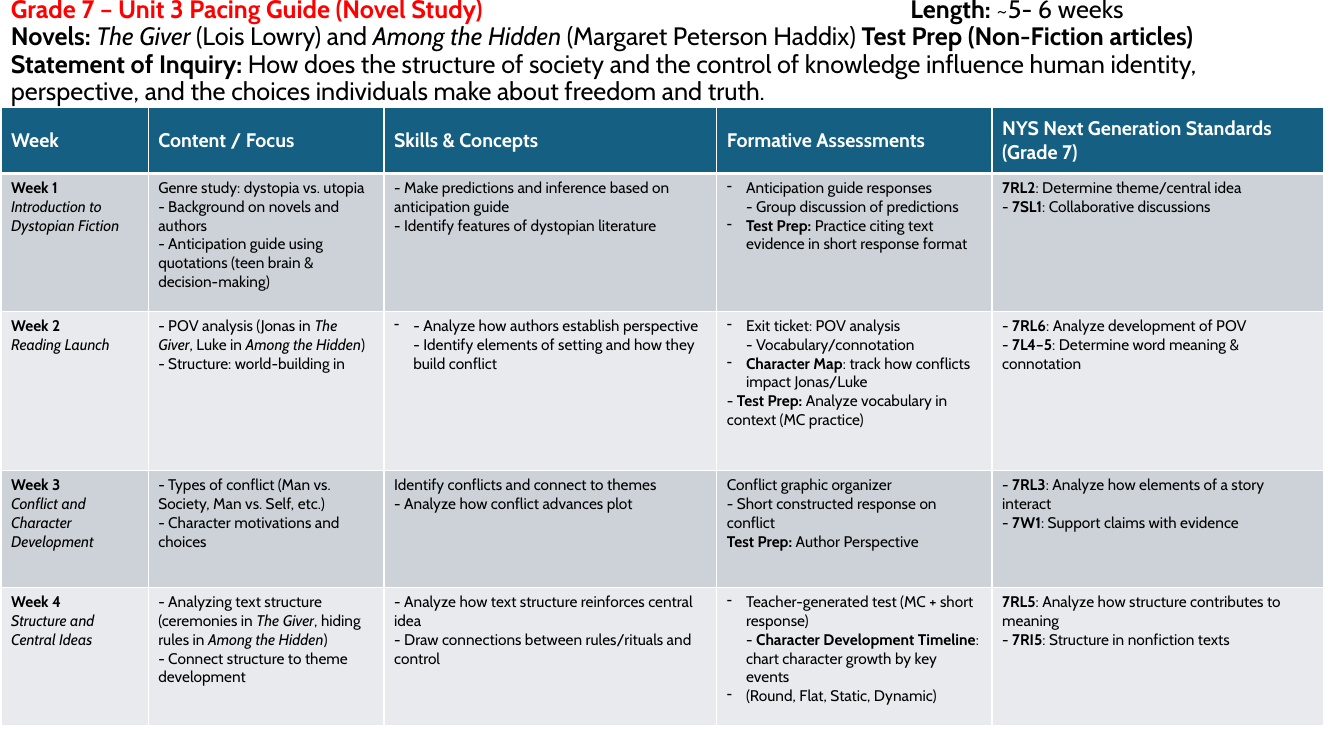
from lxml.etree import SubElement
from pptx import Presentation
from pptx.dml.color import RGBColor
from pptx.enum.text import MSO_ANCHOR as Anchor
from pptx.oxml.ns import qn
from pptx.util import Inches, Pt

FONT = "Cabin"
RED = RGBColor(0xFF, 0x00, 0x00)
BLACK = RGBColor(0x00, 0x00, 0x00)
WHITE = RGBColor(0xFF, 0xFF, 0xFF)
TEAL = RGBColor(0x15, 0x60, 0x82)
BANDS = [RGBColor(0xCC, 0xD2, 0xD8), RGBColor(0xE8, 0xEA, 0xED)]

SLIDE_W, SLIDE_H = 13.33, 7.5
COLUMNS = [1.46, 2.34, 3.3, 2.73, 3.29]
ROWS = [0.65, 1.37, 1.58, 1.16, 1.37]
HANG = 0.19
BULLET = "• "

# Markup: *bold*, _italic_; a leading bullet makes a hanging dash item
HEADING = (
    "*Grade 7 – Unit 3 Pacing Guide (Novel Study)**\tLength:* ~5- 6 weeks\n"
    "*Novels:* _The Giver_ (Lois Lowry) and _Among the Hidden_ "
    "(Margaret Peterson Haddix) *Test Prep (Non-Fiction articles)*\n"
    "*Statement of Inquiry:* How does the structure of society and the control of "
    "knowledge influence human identity, perspective, and the choices individuals "
    "make about freedom and truth."
)
TITLES = ["Week", "Content / Focus", "Skills & Concepts", "Formative Assessments",
          "NYS Next Generation Standards (Grade 7)"]
WEEKS = [
    [
        ["*Week 1*\n_Introduction to Dystopian Fiction_"],
        ["Genre study: dystopia vs. utopia\n- Background on novels and authors\n"
         "- Anticipation guide using quotations (teen brain & decision-making)"],
        ["- Make predictions and inference based on anticipation guide\n"
         "- Identify features of dystopian literature"],
        ["• Anticipation guide responses\n- Group discussion of predictions",
         "• *Test Prep:* Practice citing text evidence in short response format"],
        ["*7RL2*: Determine theme/central idea\n- *7SL1*: Collaborative discussions"],
    ],
    [
        ["*Week 2*\n_Reading Launch_"],
        ["- POV analysis (Jonas in _The Giver_, Luke in _Among the Hidden_)\n"
         "- Structure: world-building in"],
        ["• - Analyze how authors establish perspective\n"
         "- Identify elements of setting and how they build conflict"],
        ["• Exit ticket: POV analysis\n- Vocabulary/connotation",
         "• *Character Map*: track how conflicts impact Jonas/Luke",
         "- *Test Prep:* Analyze vocabulary in context (MC practice)"],
        ["- *7RL6*: Analyze development of POV\n"
         "- *7L4–5*: Determine word meaning & connotation"],
    ],
    [
        ["*Week 3*\n_Conflict and Character Development_"],
        ["- Types of conflict (Man vs. Society, Man vs. Self, etc.)\n"
         "- Character motivations and choices"],
        ["Identify conflicts and connect to themes\n"
         "- Analyze how conflict advances plot"],
        ["Conflict graphic organizer\n- Short constructed response on conflict",
         "*Test Prep:* Author Perspective"],
        ["- *7RL3*: Analyze how elements of a story interact\n"
         "- *7W1*: Support claims with evidence"],
    ],
    [
        ["*Week 4*\n_Structure and Central Ideas_"],
        ["- Analyzing text structure (ceremonies in _The Giver_, hiding rules in "
         "_Among the Hidden_)\n- Connect structure to theme development"],
        ["- Analyze how text structure reinforces central idea\n"
         "- Draw connections between rules/rituals and control"],
        ["• Teacher-generated test (MC + short response)\n"
         "- *Character Development Timeline*: chart character growth by key events",
         "• (Round, Flat, Static, Dynamic)"],
        ["*7RL5*: Analyze how structure contributes to meaning\n"
         "- *7RI5*: Structure in nonfiction texts"],
    ],
]


def write_rich(paragraph, markup, size, color):
    """Fill a paragraph with runs, turning the markup into bold and italic."""
    for number, line in enumerate(markup.split("\n")):
        if number:
            paragraph.add_line_break()
        for bold, part in enumerate(line.split("*")):
            for italic, words in enumerate(part.split("_")):
                if words:
                    run = paragraph.add_run()
                    run.text = words
                    font = run.font
                    font.name, font.size = FONT, Pt(size)
                    font.bold, font.italic = bold % 2 == 1, italic % 2 == 1
                    font.color.rgb = color
    # Line breaks take the size of the text around them
    for line_break in paragraph._p.findall(qn("a:br")):
        SubElement(line_break, qn("a:rPr")).set("sz", str(size * 100))


def hang_dash(paragraph):
    properties = paragraph._p.get_or_add_pPr()
    properties.set("marL", str(Inches(HANG)))
    properties.set("indent", str(-Inches(HANG)))
    SubElement(properties, qn("a:buFontTx"))
    SubElement(properties, qn("a:buChar")).set("char", "-")


def draw_borders(cell, bottom):
    properties = cell._tc.get_or_add_tcPr()
    for side, width in (("L", 1), ("R", 1), ("T", 1), ("B", bottom)):
        line = SubElement(properties, qn(f"a:ln{side}"), w=str(Pt(width)))
        fill = SubElement(line, qn("a:solidFill"))
        SubElement(fill, qn("a:srgbClr")).set("val", str(WHITE))


def fill_cell(cell, paragraphs, size, color, background, bottom=1):
    draw_borders(cell, bottom)
    cell.fill.solid()
    cell.fill.fore_color.rgb = background
    frame = cell.text_frame
    for number, markup in enumerate(paragraphs):
        paragraph = frame.add_paragraph() if number else frame.paragraphs[0]
        if markup.startswith(BULLET):
            hang_dash(paragraph)
        write_rich(paragraph, markup.removeprefix(BULLET), size, color)


def add_heading(slide, left, top, width, height):
    box = slide.shapes.add_textbox(*map(Inches, (left, top, width, height)))
    frame = box.text_frame
    frame.word_wrap = True
    frame.vertical_anchor = Anchor.TOP
    frame.margin_top = frame.margin_bottom = 0
    heading = frame.paragraphs[0]
    heading.line_spacing = 0.9
    # Tab stop for the unit length
    stops = SubElement(heading._p.get_or_add_pPr(), qn("a:tabLst"))
    SubElement(stops, qn("a:tab"), pos=str(Inches(width * 0.68)), algn="l")
    write_rich(heading, HEADING, 18, BLACK)
    unit, length = heading.runs[:2]
    unit.font.color.rgb = RED
    length.font.bold = True


def add_pacing_table(slide, left, top, width, height):
    table = slide.shapes.add_table(len(ROWS), len(COLUMNS),
                                   *map(Inches, (left, top, width, height))).table
    table.horz_banding = False
    for column, share in zip(table.columns, COLUMNS):
        column.width = Inches(width * share / sum(COLUMNS))
    for row, share in zip(table.rows, ROWS):
        row.height = Inches(height * share / sum(ROWS))
    # Header row
    for column, title in enumerate(TITLES):
        cell = table.cell(0, column)
        fill_cell(cell, [f"*{title}*"], 14, WHITE, TEAL, bottom=3)
        cell.vertical_anchor = Anchor.MIDDLE
    # One row a week
    for number, week in enumerate(WEEKS):
        for column, paragraphs in enumerate(week):
            fill_cell(table.cell(number + 1, column), paragraphs, 11, BLACK,
                      BANDS[number % 2])


def main():
    deck = Presentation()
    deck.slide_width, deck.slide_height = Inches(SLIDE_W), Inches(SLIDE_H)
    slide = deck.slides.add_slide(deck.slide_layouts[6])
    add_heading(slide, 0.01, -0.03, sum(COLUMNS), 1.1)
    add_pacing_table(slide, 0.01, 1.07, sum(COLUMNS), sum(ROWS))
    deck.save("out.pptx")


if __name__ == "__main__":
    main()
